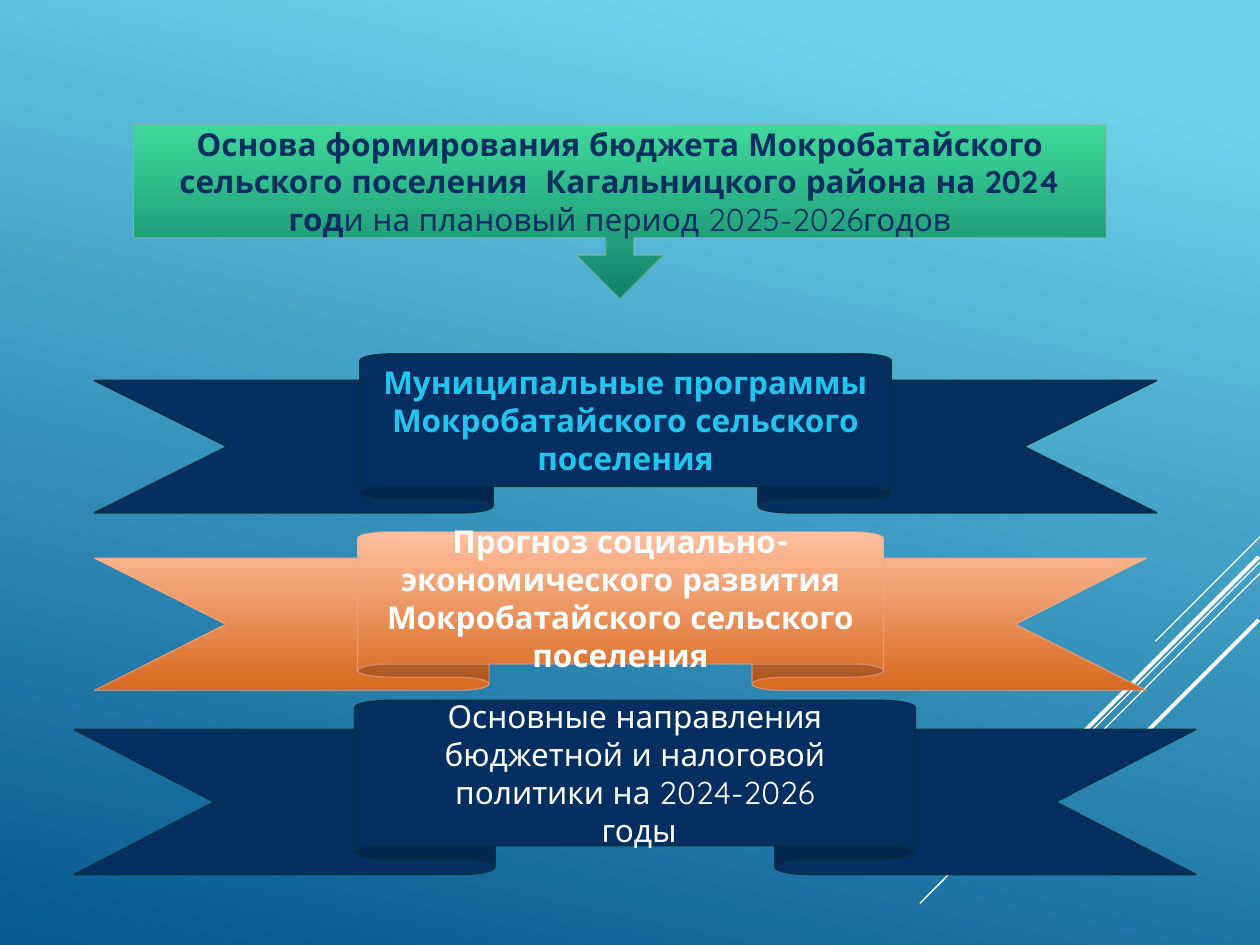
from lxml import etree
from pptx import Presentation
from pptx.dml.color import RGBColor
from pptx.enum.shapes import MSO_CONNECTOR, MSO_SHAPE
from pptx.enum.text import MSO_ANCHOR, PP_ALIGN
from pptx.oxml.ns import qn
from pptx.util import Inches, Pt

RIBBON = MSO_SHAPE.UP_RIBBON
CALLOUT = MSO_SHAPE.DOWN_ARROW_CALLOUT
STRAIGHT = MSO_CONNECTOR.STRAIGHT
MIDDLE = MSO_ANCHOR.MIDDLE
CENTER = PP_ALIGN.CENTER

NAVY = RGBColor(0x05, 0x2F, 0x61)
NAVY_EDGE = RGBColor(0x04, 0x31, 0x48)
CYAN = RGBColor(0x22, 0xC5, 0xED)
WHITE = RGBColor(0xFF, 0xFF, 0xFF)
PEACH = RGBColor(0xFF, 0xC1, 0xA0)
ORANGE = RGBColor(0xD7, 0x68, 0x1F)
ORANGE_EDGE = RGBColor(0xEE, 0xA7, 0x8F)
MINT = RGBColor(0x3F, 0xD9, 0x9B)
GREEN = RGBColor(0x11, 0x80, 0x6A)
GREEN_EDGE = RGBColor(0x8A, 0xB7, 0xA1)
SKY = RGBColor(0x6E, 0xD2, 0xEB)
OCEAN = RGBColor(0x06, 0x58, 0x8E)

FONT = "Quicksand"
DOWNWARD = 270

RAYS = [
    ((10, 4.26), (9.17, 5.09), 0.75),
    ((10, 4.46), (7.3, 7.17), 0.75),
    ((10, 4.55), (8.28, 6.27), 0.75),
    ((9.99, 4.42), (8.42, 5.99), 2.25),
    ((9.99, 4.92), (8.85, 6.06), 2.25),
]

RIBBONS = [
    ((0.75, 2.81, 8.43, 1.26), [NAVY], NAVY_EDGE, CYAN,
     [[("Муниципальные программы Мокробатайского сельского поселения", True)]]),
    ((0.75, 4.22, 8.35, 1.26), [PEACH, ORANGE], ORANGE_EDGE, WHITE,
     [[("Прогноз социально-экономического развития "
        "Мокробатайского сельского поселения", True)]]),
    ((0.59, 5.56, 8.9, 1.38), [NAVY], NAVY_EDGE, WHITE,
     [[("Основные направления бюджетной и налоговой политики на 2024-2026", False)],
      [(" годы", False)]]),
]

HEADING = [[
    ("Основа формирования бюджета Мокробатайского сельского поселения  "
     "Кагальницкого района на 2024 год", True),
    ("и на плановый период 2025-2026годов", False),
]]


def paint_gradient(fill, colors, angle, start=0):
    """Fill with a linear two-colour gradient."""
    fill.gradient()
    fill.gradient_angle = angle
    for stop, color, position in zip(fill.gradient_stops, colors, (start, 1)):
        stop.color.rgb = color
        stop.position = position


def paint_shape(shape, colors, edge):
    """Give a solid shape a firm edge and a gradient one a translucent edge."""
    shape.shadow.inherit = False
    shape.line.color.rgb = edge
    if len(colors) == 1:
        shape.fill.solid()
        shape.fill.fore_color.rgb = colors[0]
        shape.line.width = Pt(1)
        return
    paint_gradient(shape.fill, colors, DOWNWARD)
    shape.line.width = Pt(0.75)
    tint = shape.line._get_or_add_ln().find(".//" + qn("a:srgbClr"))
    etree.SubElement(tint, qn("a:alpha"), val="60000")


def write_text(shape, paragraphs, color):
    """Write centred paragraphs of (text, bold) spans."""
    frame = shape.text_frame
    frame.word_wrap = True
    frame.vertical_anchor = MIDDLE
    for index, spans in enumerate(paragraphs):
        para = frame.add_paragraph() if index else frame.paragraphs[0]
        para.alignment = CENTER
        for text, bold in spans:
            span = para.add_run()
            span.text = text
            span.font.color.rgb = color
            for name, value in {"name": FONT, "size": Pt(18), "bold": bold}.items():
                setattr(span.font, name, value)


def add_banner(page, kind, box, colors, edge, text_color, paragraphs):
    """Place one filled banner with its text in the given box."""
    shape = page.shapes.add_shape(kind, *map(Inches, box))
    paint_shape(shape, colors, edge)
    write_text(shape, paragraphs, text_color)
    return shape


def add_heading(page, box):
    """Place the heading callout with its down arrow."""
    callout = add_banner(page, CALLOUT, box, [MINT, GREEN], GREEN_EDGE, NAVY, HEADING)
    for index, value in enumerate((0.16, 0.25, 0.25, 0.65)):
        callout.adjustments[index] = value


def add_rays(page):
    """Draw the diagonal white rays at the right edge."""
    for start, end, width in RAYS:
        ray = page.shapes.add_connector(STRAIGHT, *map(Inches, start + end))
        ray.line.color.rgb = WHITE
        ray.line.width = Pt(width)
        etree.SubElement(ray._element.spPr, qn("a:effectLst"))


def main():
    """Build and save the deck."""
    deck = Presentation()
    deck.slide_width, deck.slide_height = Inches(10), Inches(7.5)
    page = deck.slides.add_slide(deck.slide_layouts[6])
    paint_gradient(page.background.fill, (SKY, OCEAN), 360 - 102, start=0.1)
    add_rays(page)
    for ribbon in RIBBONS:
        add_banner(page, RIBBON, *ribbon)
    add_heading(page, (1.06, 0.99, 7.72, 1.38))
    deck.save("out.pptx")


if __name__ == "__main__":
    main()
